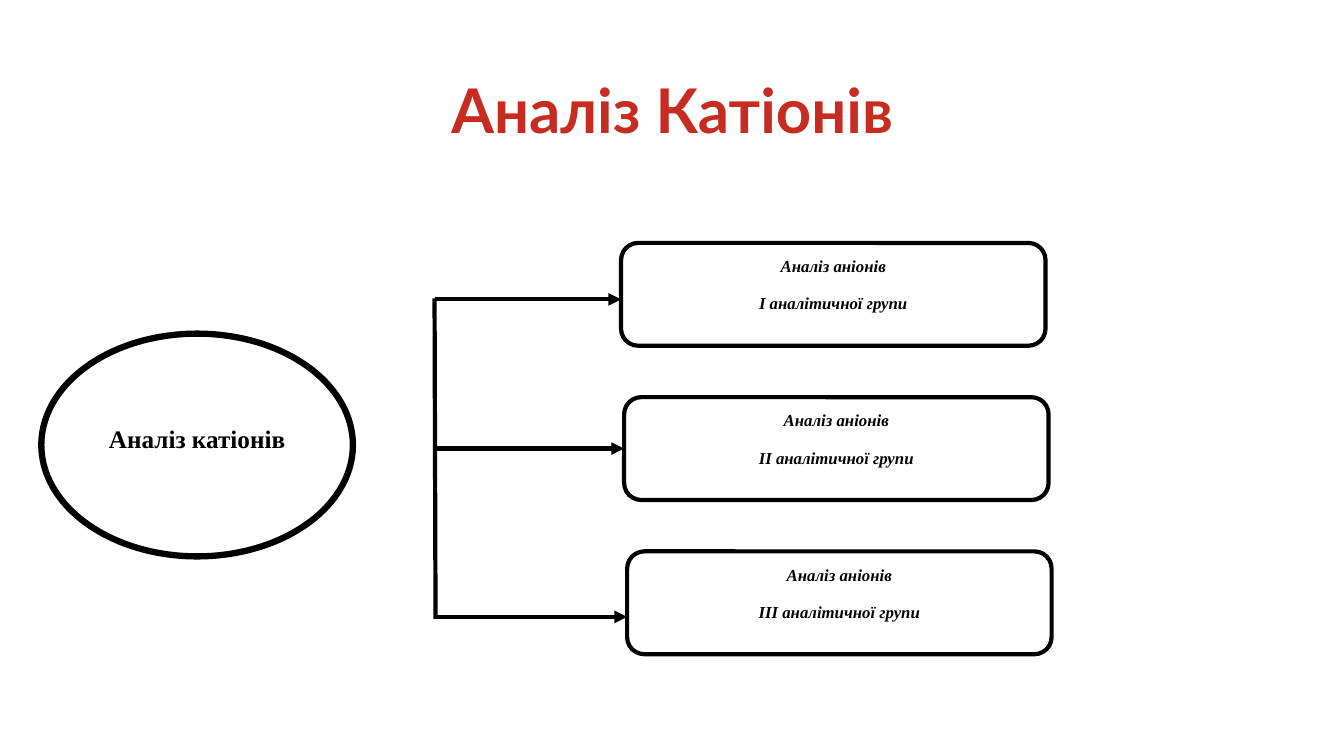
"""Build the slide that splits cation analysis into three groups."""
import dataclasses

import pptx
import pptx.dml.color
import pptx.enum.shapes
import pptx.enum.text
import pptx.oxml
import pptx.oxml.ns
import pptx.util

Inches = pptx.util.Inches
Pt = pptx.util.Pt
Kind = pptx.enum.shapes.MSO_SHAPE
Anchor = pptx.enum.text.MSO_ANCHOR
RED = pptx.dml.color.RGBColor(0xC7, 0x2C, 0x21)
BLACK = pptx.dml.color.RGBColor(0, 0, 0)
WHITE = pptx.dml.color.RGBColor(255, 255, 255)
SERIF = "Times New Roman"
TRUNK = 4.31
WIDE, HIGH = 4.21, 1.02


@dataclasses.dataclass
class Group:
    text: str
    left: float
    top: float
    level: float
    glued: bool = False


GROUPS = [
    Group("І аналітичної групи", 6.16, 2.41, 2.97),
    Group("ІІ аналітичної групи", 6.19, 3.94, 4.45, True),
    Group("ІІІ аналітичної групи", 6.22, 5.47, 6.12),
]


def style(para, name: str, size: float, color, italic: bool = False) -> None:
    para.alignment = pptx.enum.text.PP_ALIGN.CENTER
    font = para.font
    font.name, font.size = name, Pt(size)
    font.bold, font.italic = True, italic
    font.color.rgb = color


def add_node(slide, kind, box: tuple, texts: list[str], size: float,
             weight: float, inset: float = 0.05, italic: bool = False):
    node = slide.shapes.add_shape(kind, *map(Inches, box))
    node.shadow.inherit = False
    node.fill.solid()
    node.fill.fore_color.rgb = WHITE
    node.line.color.rgb = BLACK
    node.line.width = Pt(weight)
    frame = node.text_frame
    frame.word_wrap = True
    frame.vertical_anchor = Anchor.TOP
    frame.margin_top = Inches(inset)
    frame.text = "\n".join(texts)
    for para in frame.paragraphs:
        para.line_spacing = 1.15
        para.space_after = Pt(10)
        style(para, SERIF, size, BLACK, italic)
    return node


def add_line(slide, start: tuple, end: tuple, arrow: bool = False):
    line = slide.shapes.add_connector(
        pptx.enum.shapes.MSO_CONNECTOR.STRAIGHT, *map(Inches, start + end))
    line.line.color.rgb = BLACK
    line.line.width = Pt(3)
    if arrow:
        tail = pptx.oxml.parse_xml(
            f'<a:tailEnd {pptx.oxml.ns.nsdecls("a")} type="triangle"/>')
        line.line._get_or_add_ln().append(tail)
    line._element.spPr.append(pptx.oxml.parse_xml(
        f'<a:effectLst {pptx.oxml.ns.nsdecls("a")}/>'))
    return line


def add_title(slide, text: str) -> None:
    title = slide.shapes.title
    title.left, title.top = Inches(0.92), Inches(0.4)
    title.width, title.height = Inches(11.5), Inches(1.45)
    frame = title.text_frame
    frame.text = text
    frame.vertical_anchor = Anchor.MIDDLE
    para = frame.paragraphs[0]
    para.line_spacing = 0.9
    style(para, "Lato", 44, RED)


def add_group(slide, group: Group) -> None:
    box = add_node(slide, Kind.ROUNDED_RECTANGLE,
                   (group.left, group.top, WIDE, HIGH),
                   ["Аналіз аніонів", group.text], 12, 3, italic=True)
    arrow = add_line(slide, (TRUNK, group.level),
                     (group.left, group.level), arrow=True)
    if group.glued:
        arrow.end_connect(box, 1)


def main() -> None:
    deck = pptx.Presentation()
    deck.slide_width, deck.slide_height = Inches(13.33), Inches(7.5)
    slide = deck.slides.add_slide(deck.slide_layouts[5])
    add_title(slide, "Аналіз Катіонів")
    add_node(slide, Kind.OVAL, (0.41, 3.31, 3.09, 2.21),
             ["Аналіз катіонів"], 18, 4.5, inset=0.52)
    add_line(slide, (TRUNK, 2.96), (4.32, 6.14))
    for group in GROUPS:
        add_group(slide, group)
    deck.save("out.pptx")


if __name__ == "__main__":
    main()
